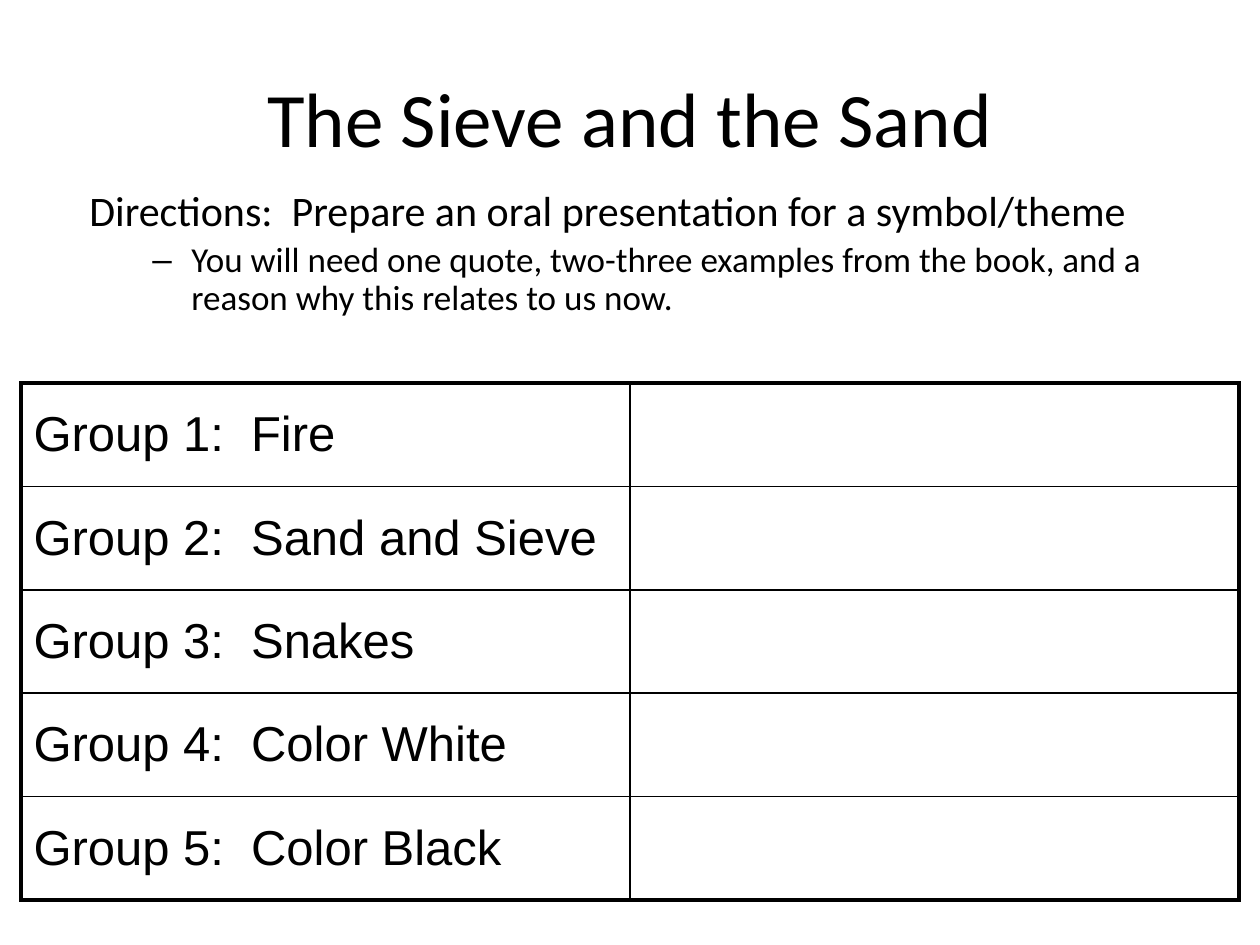
from lxml.etree import SubElement
from pptx import Presentation
from pptx.dml.color import RGBColor
from pptx.enum.text import MSO_ANCHOR, PP_ALIGN
from pptx.oxml.ns import qn
from pptx.util import Emu, Pt

BLACK = RGBColor(0, 0, 0)
WHITE = RGBColor(255, 255, 255)
THICK, THIN = Pt(2.25), Pt(1)
GROUPS = ["Fire", "Sand and Sieve", "Snakes", "Color White", "Color Black"]


def px(length):
    """Turn px (126 to the inch) into EMU."""
    return Emu(round(length * 914400 / 126))


def style(para, font, size):
    for span in para.runs:
        span.font.name = font
        span.font.size = Pt(size)
        span.font.color.rgb = BLACK


def place_title(page, left, top, width, height):
    title = page.shapes.title
    title.left, title.top = px(left), px(top)
    title.width, title.height = px(width), px(height)
    frame = title.text_frame
    frame.text = "The Sieve and the Sand"
    frame.vertical_anchor = MSO_ANCHOR.MIDDLE
    para = frame.paragraphs[0]
    para.alignment = PP_ALIGN.CENTER
    style(para, "Calibri", 44)


def indent(para, margin, hanging, bullet=None):
    props = para._p.get_or_add_pPr()
    props.set("marL", str(px(margin)))
    props.set("indent", str(px(-hanging)))
    if bullet:
        SubElement(props, qn("a:buFont"), typeface="Arial")
        SubElement(props, qn("a:buChar"), char=bullet)
    else:
        SubElement(props, qn("a:buNone"))


def place_directions(page, left, top, width, height):
    box = page.shapes.add_textbox(px(left), px(top), px(width), px(height))
    frame = box.text_frame
    frame.word_wrap = True
    heading = frame.paragraphs[0]
    heading.text = "Directions:  Prepare an oral presentation for a symbol/theme"
    detail = frame.add_paragraph()
    detail.text = ("You will need one quote, two-three examples from the book, "
                   "and a reason why this relates to us now.")
    detail.level = 1
    for para, size in ((heading, 24), (detail, 20)):
        para.line_spacing = 0.9
        para.space_before = Pt(size * 0.2)
        style(para, "Calibri", size)
    indent(heading, 48, 48)
    indent(detail, 102, 39, "–")


def set_borders(cell, widths):
    """Draw the left, right, top and bottom lines of a cell."""
    props = cell._tc.get_or_add_tcPr()
    for index, (side, width) in enumerate(zip("LRTB", widths)):
        line = props.makeelement(qn(f"a:ln{side}"), {"w": str(width)})
        fill = SubElement(line, qn("a:solidFill"))
        SubElement(fill, qn("a:srgbClr"), val=str(BLACK))
        props.insert(index, line)


def place_groups(page, left, top, width, height):
    rows, columns = len(GROUPS), 2
    table = page.shapes.add_table(rows, columns, px(left), px(top),
                                  px(width), px(height)).table
    table.first_row = table.horz_banding = False
    for column in table.columns:
        column.width = px(width / columns)
    for r, group in enumerate(GROUPS):
        table.rows[r].height = px(height / rows)
        table.cell(r, 0).text = f"Group {r + 1}:  {group}"
        for c in range(columns):
            cell = table.cell(r, c)
            cell.fill.solid()
            cell.fill.fore_color.rgb = WHITE
            cell.vertical_anchor = MSO_ANCHOR.MIDDLE
            para = cell.text_frame.paragraphs[0]
            para.space_before = Pt(5.6)
            style(para, "Arial", 28)
            # Thick lines run round the outside only
            outer = (c == 0, c == columns - 1, r == 0, r == rows - 1)
            set_borders(cell, [THICK if edge else THIN for edge in outer])


def main():
    deck = Presentation()
    deck.slide_width, deck.slide_height = px(1260), px(945)
    page = deck.slides.add_slide(deck.slide_layouts[5])
    place_title(page, 63, 38, 1134, 157)
    place_directions(page, 77, 184, 1124, 157)
    place_groups(page, 21, 383, 1218, 517)
    deck.save("out.pptx")


if __name__ == "__main__":
    main()
